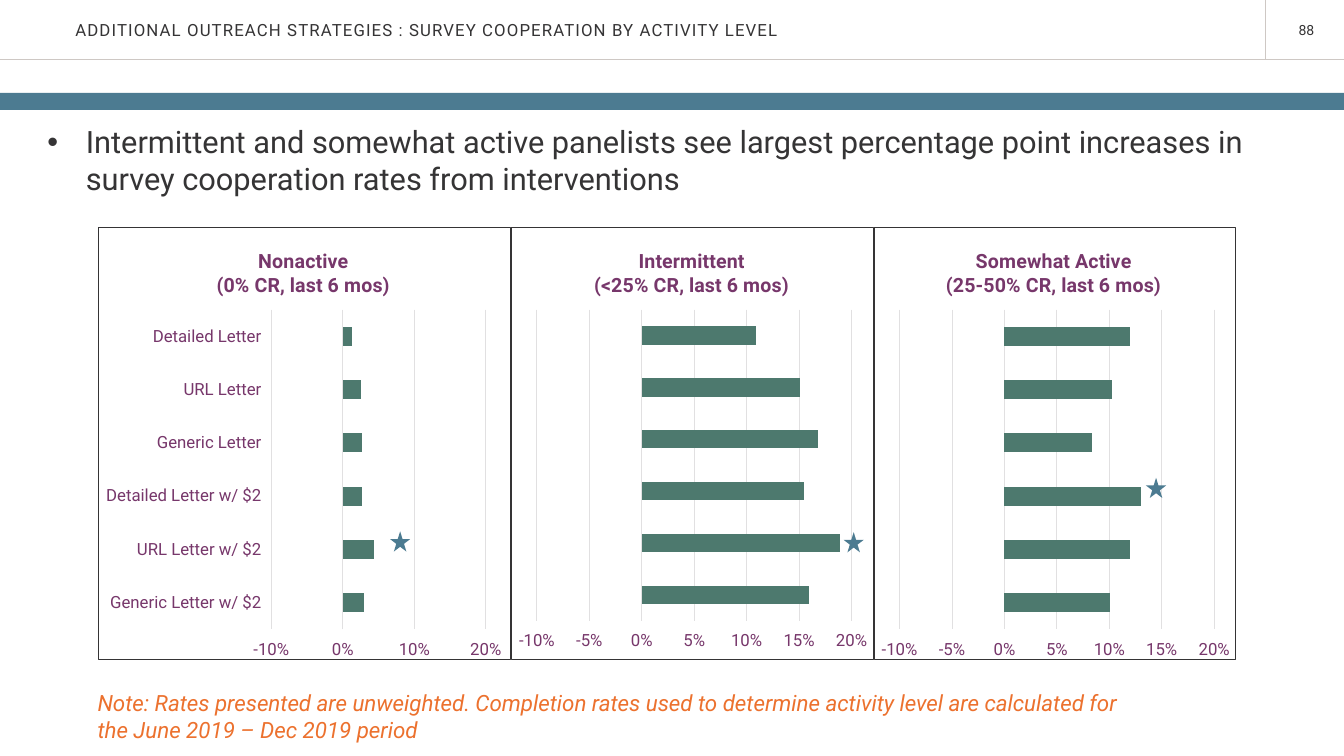
from dataclasses import dataclass

from lxml import etree
from pptx import Presentation
from pptx.chart.data import CategoryChartData
from pptx.dml.color import RGBColor
from pptx.enum.chart import XL_CHART_TYPE as ChartType, XL_TICK_LABEL_POSITION as LabelPosition
from pptx.enum.chart import XL_TICK_MARK as TickMark
from pptx.enum.shapes import MSO_CONNECTOR as Connector, MSO_SHAPE as Shape
from pptx.enum.text import MSO_ANCHOR as Anchor, MSO_AUTO_SIZE as AutoSize, PP_ALIGN as Align
from pptx.oxml import parse_xml
from pptx.oxml.ns import nsdecls, qn
from pptx.util import Cm, Pt


@dataclass(frozen=True)
class Theme:
    font: str = "Roboto"
    ink: RGBColor = RGBColor.from_string("353435")
    rule: RGBColor = RGBColor.from_string("CEC8C4")
    grid: RGBColor = RGBColor.from_string("E1E0E1")
    blue: RGBColor = RGBColor.from_string("4C7B91")
    green: RGBColor = RGBColor.from_string("4D796E")
    purple: RGBColor = RGBColor.from_string("77376B")
    orange: RGBColor = RGBColor.from_string("EC712E")
    number_size: Pt = Pt(10)
    label_size: Pt = Pt(12)
    heading_size: Pt = Pt(14)
    note_size: Pt = Pt(16)
    body_size: Pt = Pt(22)


theme = Theme()


def style(font, size, color, bold=False, italic=False):
    font.name, font.size, font.bold, font.italic = theme.font, size, bold, italic
    font.color.rgb = color


def place(shape, left, top, width, height):
    """Position a shape, with all lengths in centimetres."""
    shape.left, shape.top = Cm(left), Cm(top)
    shape.width, shape.height = Cm(width), Cm(height)


presentation = Presentation()
presentation.slide_width, presentation.slide_height = Cm(33.87), Cm(19.05)
slide = presentation.slides.add_slide(presentation.slide_layouts[1])
shapes = slide.shapes

# Header
for x1, y1, x2, y2 in [(0, 1.5, 33.87, 1.5), (31.9, 0, 31.9, 1.5)]:
    rule = shapes.add_connector(Connector.STRAIGHT, Cm(x1), Cm(y1), Cm(x2), Cm(y2))
    rule.line.color.rgb, rule.line.width = theme.rule, Pt(0.65)
    etree.SubElement(rule._element.spPr, qn("a:effectLst"))

band = shapes.add_shape(Shape.RECTANGLE, 0, Cm(2.34), Cm(33.87), Cm(0.43))
band.shadow.inherit = False
band.fill.solid()
band.fill.fore_color.rgb = theme.blue
band.line.fill.background()

title = shapes.title
place(title, 1.9, 0, 23.62, 1.52)
frame = title.text_frame
frame.margin_left = frame.margin_right = frame.margin_top = frame.margin_bottom = 0
frame.vertical_anchor, frame.auto_size = Anchor.MIDDLE, AutoSize.NONE
paragraph = frame.paragraphs[0]
paragraph.alignment = Align.LEFT
run = paragraph.add_run()
run.text = "ADDITIONAL OUTREACH STRATEGIES : SURVEY COOPERATION BY ACTIVITY LEVEL"
style(run.font, theme.label_size, theme.ink)
run.font._element.set("spc", "80")

# Main point
body = slide.placeholders[1]
place(body, 0.94, 2.97, 32, 2.13)
body.text_frame.auto_size = AutoSize.NONE
body.text_frame.vertical_anchor = Anchor.TOP
paragraph = body.text_frame.paragraphs[0]
properties = paragraph._p.get_or_add_pPr()
properties.set("marL", str(Cm(0.97)))
properties.set("indent", str(-Cm(0.97)))
etree.SubElement(properties, qn("a:buFont")).set("typeface", "Arial")
etree.SubElement(properties, qn("a:buChar")).set("char", "•")
paragraph.space_before = Pt(0)
run = paragraph.add_run()
run.text = ("Intermittent and somewhat active panelists see largest percentage point increases "
            "in survey cooperation rates from interventions")
style(run.font, theme.body_size, theme.ink)

# Slide number and note
for text, box, align, size, color, italic in [
    ("88", (32.1, 0.41, 1.27, 0.69), Align.RIGHT, theme.number_size, theme.ink, False),
    ("Note: Rates presented are unweighted. Completion rates used to determine activity level "
     "are calculated for the June 2019 – Dec 2019 period",
     (2.21, 17.25, 26.67, 1.63), Align.LEFT, theme.note_size, theme.orange, True),
]:
    text_box = shapes.add_textbox(*map(Cm, box))
    text_box.text_frame.word_wrap = True
    paragraph = text_box.text_frame.paragraphs[0]
    paragraph.alignment = align
    run = paragraph.add_run()
    run.text = text
    style(run.font, size, color, italic=italic)

# Chart panels, side by side; bars run from the bottom up
letters = ["Generic Letter w/ $2", "URL Letter w/ $2", "Detailed Letter w/ $2",
           "Generic Letter", "URL Letter", "Detailed Letter"]
numbers = ["1", "2", "3", "4", "5", "6"]
# heading, categories, rates, panel width, axis step, title left, plot area (x, y, w, h)
panels = [
    (("Nonactive", "(0% CR, last 6 mos)"), letters,
     (0.03, 0.044, 0.027, 0.027, 0.025, 0.013), 10.42, 0.1, 0.28, (0.42, 0.19, 0.52, 0.74)),
    (("Intermittent", "(<25% CR, last 6 mos)"), numbers,
     (0.159, 0.189, 0.155, 0.168, 0.151, 0.109), 9.14, 0.05, 0.22, (0.07, 0.19, 0.87, 0.72)),
    (("Somewhat Active", "(25-50% CR, last 6 mos)"), numbers,
     (0.101, 0.12, 0.13, 0.083, 0.103, 0.12), 9.14, 0.05, 0.19, (0.07, 0.19, 0.87, 0.74)),
]
left = 2.46
for heading, categories, rates, width, step, title_left, plot_area in panels:
    data = CategoryChartData(number_format="0%")
    data.categories = categories
    data.add_series("Series 1", rates)
    chart = shapes.add_chart(ChartType.BAR_CLUSTERED, Cm(left), Cm(5.72),
                             Cm(width), Cm(10.92), data).chart
    left += width
    style(chart.font, theme.label_size, theme.purple)
    chart.has_legend = False

    title_frame = chart.chart_title.text_frame
    for index, line in enumerate(heading):
        paragraph = title_frame.add_paragraph() if index else title_frame.paragraphs[0]
        run = paragraph.add_run()
        run.text = line
        style(run.font, theme.heading_size, theme.purple, bold=True)

    plot = chart.plots[0]
    plot.gap_width, plot.vary_by_categories = 182, False
    fill = plot.series[0].format.fill
    fill.solid()
    fill.fore_color.rgb = theme.green

    rate_axis, letter_axis = chart.value_axis, chart.category_axis
    rate_axis.minimum_scale, rate_axis.maximum_scale, rate_axis.major_unit = -0.1, 0.2, step
    rate_axis.tick_labels.number_format = "0%"
    rate_axis.tick_labels.number_format_is_linked = False
    rate_axis.format.line.fill.background()
    letter_axis.visible = categories is letters
    for axis in (rate_axis, letter_axis):
        axis.major_tick_mark = axis.minor_tick_mark = TickMark.NONE
        axis.tick_label_position = LabelPosition.LOW
        style(axis.tick_labels.font, theme.label_size, theme.purple)
    rate_axis.has_major_gridlines = True
    for line in (rate_axis.major_gridlines.format.line, letter_axis.format.line):
        line.color.rgb, line.width = theme.grid, Pt(0.75)

    x, y, w, h = plot_area
    layouts = [
        (chart.chart_title._element, {"xMode": "edge", "yMode": "edge", "x": title_left, "y": 0.04}),
        (chart._chartSpace.chart.plotArea, {"layoutTarget": "inner", "xMode": "edge",
                                            "yMode": "edge", "x": x, "y": y, "w": w, "h": h}),
    ]
    for element, settings in layouts:
        for layout in element.findall(qn("c:layout")):
            element.remove(layout)
        layout = etree.Element(qn("c:layout"))
        manual = etree.SubElement(layout, qn("c:manualLayout"))
        for name, value in settings.items():
            etree.SubElement(manual, qn(f"c:{name}")).set("val", str(value))
        text = element.find(qn("c:tx"))
        if text is None:
            element.insert(0, layout)
        else:
            text.addnext(layout)

    chart._chartSpace.chart.addnext(parse_xml(
        f'<c:spPr {nsdecls("c", "a")}><a:noFill/><a:ln w="{Pt(0.75)}"><a:solidFill>'
        f'<a:srgbClr val="{theme.ink}"/></a:solidFill></a:ln></c:spPr>'))

# Highest rate in each panel
for star_left, star_top in [(9.83, 13.39), (21.26, 13.41), (28.88, 12.04)]:
    star = shapes.add_shape(Shape.STAR_5_POINT, Cm(star_left), Cm(star_top), Cm(0.51), Cm(0.51))
    star.shadow.inherit = False
    star.fill.solid()
    star.fill.fore_color.rgb = theme.blue
    star.line.fill.background()

presentation.save("out.pptx")
